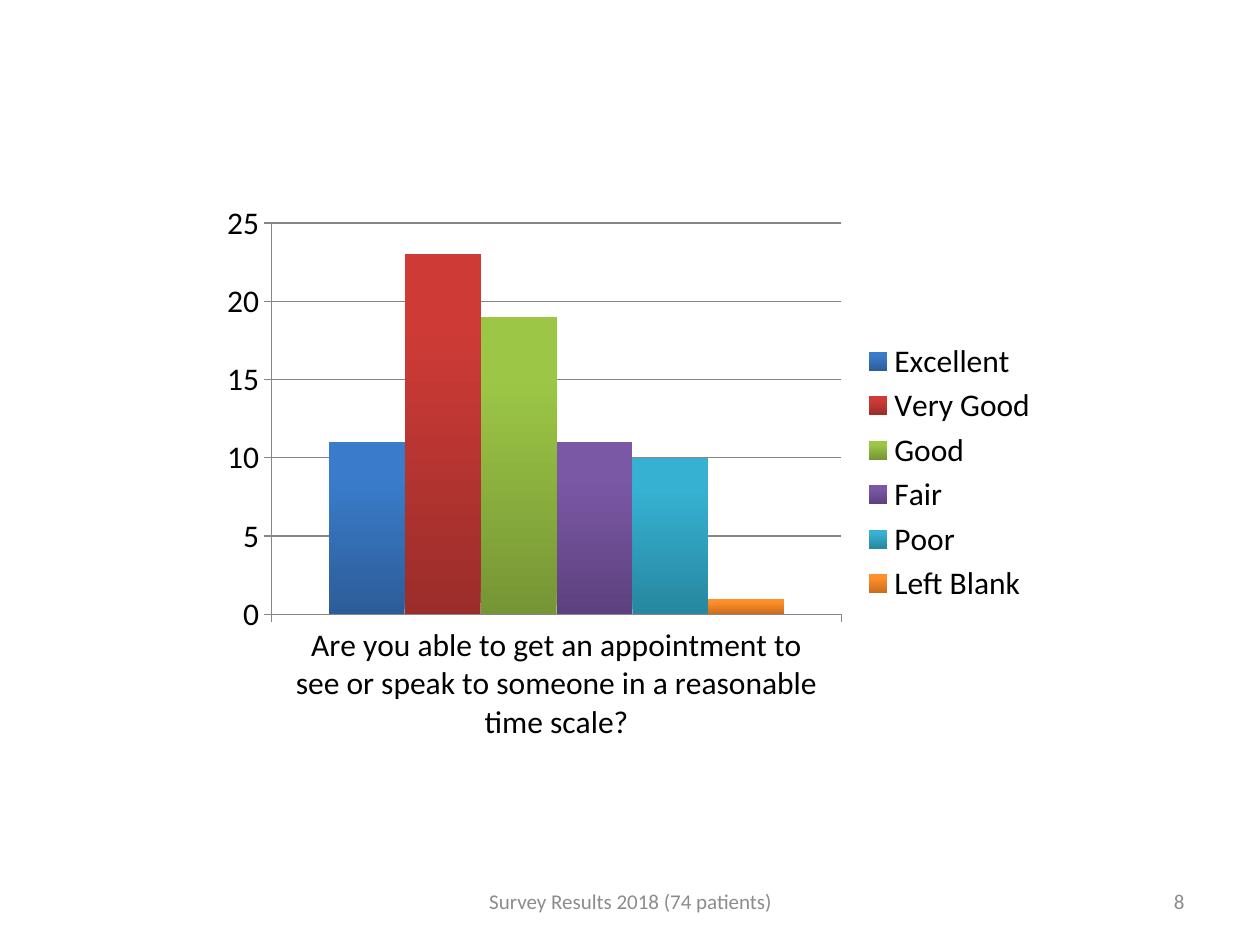
from pptx import Presentation
from pptx.chart.data import CategoryChartData
from pptx.dml.color import RGBColor
from pptx.enum.chart import XL_CHART_TYPE, XL_LEGEND_POSITION, XL_TICK_MARK
from pptx.enum.text import MSO_ANCHOR, PP_ALIGN
from pptx.util import Inches, Pt

QUESTION = ("Are you able to get an appointment to see or speak "
            "to someone in a reasonable time scale?")

# answer: (count, colour at the foot, colour at the top)
ANSWERS = {
    "Excellent": (11, "2C5D98", "3A7CCB"),
    "Very Good": (23, "9B2D2A", "CE3B37"),
    "Good": (19, "769535", "9CC746"),
    "Fair": (11, "5D417E", "7B58A6"),
    "Poor": (10, "2787A0", "36B1D2"),
    "Left Blank": (1, "CB6C1D", "FF8F2A"),
}


def colour(hex_value):
    return RGBColor.from_string(hex_value)


def set_all(target, values):
    for name, value in values.items():
        setattr(target, name, value)


class SurveySlide:
    font_name = "Calibri"
    text_colour = "000000"
    footer_colour = "8C8C8C"
    line_colour = "868686"

    def __init__(self, presentation):
        self.slide = presentation.slides.add_slide(presentation.slide_layouts[6])

    def style_font(self, font, size, hex_value):
        set_all(font, {"name": self.font_name, "size": Pt(size)})
        font.color.rgb = colour(hex_value)

    def style_line(self, line):
        line.color.rgb = colour(self.line_colour)
        line.width = Pt(0.75)

    def footer(self, text, left, width, align):
        box = self.slide.shapes.add_textbox(
            Inches(left), Inches(6.95), Inches(width), Inches(0.4))
        frame = box.text_frame
        set_all(frame, {"word_wrap": True, "vertical_anchor": MSO_ANCHOR.MIDDLE})
        paragraph = frame.paragraphs[0]
        paragraph.alignment = align
        run = paragraph.add_run()
        run.text = text
        self.style_font(run.font, 12, self.footer_colour)

    def column_chart(self, category, answers, left, top, width, height):
        data = CategoryChartData()
        data.categories = [category]
        for answer, (count, _, _) in answers.items():
            data.add_series(answer, [count])
        chart = self.slide.shapes.add_chart(
            XL_CHART_TYPE.COLUMN_CLUSTERED, Inches(left), Inches(top),
            Inches(width), Inches(height), data).chart
        set_all(chart, {"has_title": False, "has_legend": True})
        self.style_font(chart.font, 18, self.text_colour)
        set_all(chart.legend, {"position": XL_LEGEND_POSITION.RIGHT,
                               "include_in_layout": False})

        # Axes
        set_all(chart.value_axis, {"minimum_scale": 0, "maximum_scale": 25,
                                   "major_unit": 5, "has_major_gridlines": True})
        for axis in (chart.category_axis, chart.value_axis):
            set_all(axis, {"major_tick_mark": XL_TICK_MARK.OUTSIDE,
                           "minor_tick_mark": XL_TICK_MARK.NONE})
            self.style_line(axis.format.line)
        self.style_line(chart.value_axis.major_gridlines.format.line)

        # Columns, shaded from foot to top
        plot = chart.plots[0]
        set_all(plot, {"gap_width": 150, "overlap": 0, "vary_by_categories": False})
        for series, (_, foot, head) in zip(plot.series, answers.values()):
            series.invert_if_negative = False
            fill = series.format.fill
            fill.gradient()
            fill.gradient_angle = 90
            for stop, position, shade in zip(fill.gradient_stops, (0, 0.8), (foot, head)):
                stop.position = position
                stop.color.rgb = colour(shade)


def main():
    presentation = Presentation()
    set_all(presentation, {"slide_width": Inches(10), "slide_height": Inches(7.5)})
    survey = SurveySlide(presentation)

    # Survey answers
    survey.column_chart(QUESTION, ANSWERS, 1.67, 1.53, 6.67, 4.44)

    # Footer
    survey.footer("8", 7.17, 2.33, PP_ALIGN.RIGHT)
    survey.footer("Survey Results 2018 (74 patients)", 3.42, 3.17, PP_ALIGN.CENTER)

    presentation.save("out.pptx")


if __name__ == "__main__":
    main()
